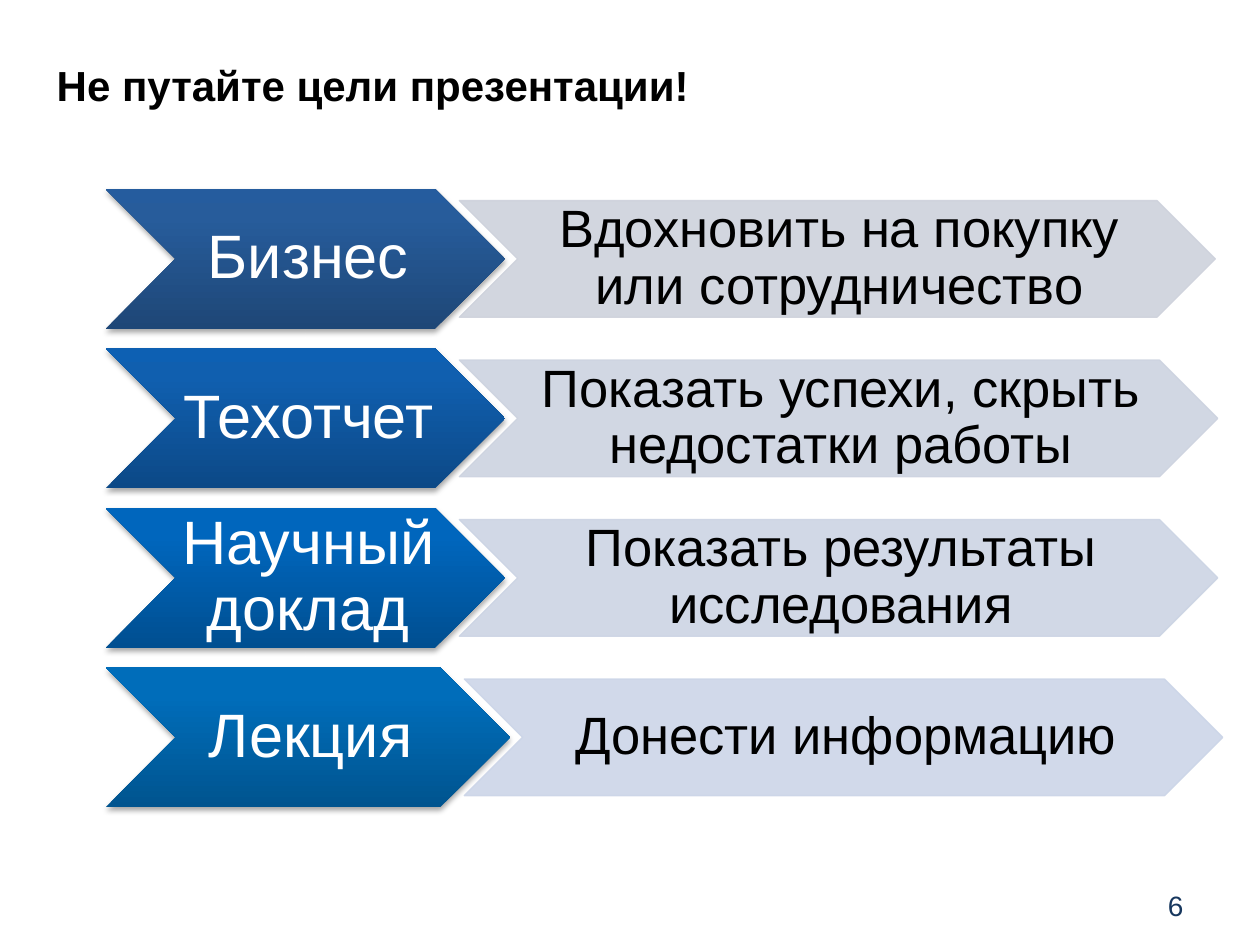
from copy import deepcopy

from lxml import etree
from pptx import Presentation
from pptx import util as u
from pptx.dml.color import RGBColor
from pptx.enum import shapes, text
from pptx.oxml import parse_xml
from pptx.oxml.ns import nsdecls, qn


def paint(color, hex_value):
    color.rgb = RGBColor.from_string(hex_value)


def add_chevron(left, top, width, height, label, size, color, inset):
    """Add a chevron with centred text and no shadow."""
    chevron = slide.shapes.add_shape(
        shapes.MSO_SHAPE.CHEVRON, u.Cm(left), u.Cm(top), u.Cm(width), u.Cm(height))
    chevron.shadow.inherit = False
    frame = chevron.text_frame
    frame.text = label
    frame.word_wrap = True
    frame.vertical_anchor = text.MSO_ANCHOR.MIDDLE
    frame.margin_left, frame.margin_right = u.Cm(inset), 0
    frame.margin_top = frame.margin_bottom = u.Cm(0.05)
    paragraph = frame.paragraphs[0]
    paragraph.alignment = text.PP_ALIGN.CENTER
    paragraph.line_spacing = 0.9
    paragraph.font.name = "Arial"
    paragraph.font.size = u.Pt(size)
    paint(paragraph.font.color, color)
    return chevron


prs = Presentation()
prs.slide_width, prs.slide_height = u.Cm(25.4), u.Cm(19.05)
slide = prs.slides.add_slide(prs.slide_layouts[5])

title = slide.shapes.title
title.left, title.top = u.Cm(0.89), u.Cm(0.33)
title.width, title.height = u.Cm(20.6), u.Cm(2.01)
title.text_frame.text = "Не путайте цели презентации!"
title.text_frame.vertical_anchor = text.MSO_ANCHOR.BOTTOM
heading = title.text_frame.paragraphs[0]
heading.alignment = text.PP_ALIGN.LEFT
heading.font.name = "Arial"
heading.font.size = u.Pt(24)
heading.font.bold = True
paint(heading.font.color, "000000")

# genre, its width, gradient from bottom to top, goal, its width, goal colour
rows = [
    ("Бизнес", 8.05, ("1E4777", "275C9B", "255C9E"),
     "Вдохновить на покупку или сотрудничество", 15.24, "CED2DC"),
    ("Техотчет", 8.05, ("0C4987", "105FAF", "0D60B3"),
     "Показать успехи, скрыть недостатки работы", 15.29, "CDD3E0"),
    ("Научный доклад", 8.05, ("004F91", "0066BD", "0067BD"),
     "Показать результаты исследования", 15.29, "CCD4E4"),
    ("Лекция", 8.15, ("00548F", "006DBA", "006DBB"),
     "Донести информацию", 15.29, "CCD5E8"),
]
LEFT, TOP, PITCH = 2.13, 3.81, 3.215
GENRE_HEIGHT, GOAL_HEIGHT, OVERLAP = 2.82, 2.35, 0.92

for i, (genre, genre_width, gradient, goal, goal_width, goal_color) in enumerate(rows):
    top = TOP + i * PITCH
    genre_chevron = add_chevron(
        LEFT, top, genre_width, GENRE_HEIGHT, genre, 35, "FFFFFF", 0.12)
    genre_chevron.line.fill.background()
    fill = genre_chevron.fill
    fill.gradient()
    fill.gradient_angle = 90
    properties = genre_chevron.element.spPr
    stop_list = properties.find(".//" + qn("a:gsLst"))
    stop_list.append(deepcopy(stop_list[-1]))
    for stop, position, color in zip(fill.gradient_stops, (0, 0.8, 1), gradient):
        stop.position = position
        paint(stop.color, color)
    properties.find(qn("a:effectLst")).append(parse_xml(
        f'<a:outerShdw {nsdecls("a")} blurRad="40000" dist="23000" dir="5400000" '
        'rotWithShape="0"><a:srgbClr val="000000"><a:alpha val="35000"/>'
        '</a:srgbClr></a:outerShdw>'))

    goal_chevron = add_chevron(
        LEFT + genre_width - OVERLAP, top + (GENRE_HEIGHT - GOAL_HEIGHT) / 2,
        goal_width, GOAL_HEIGHT, goal, 30, "000000", 0.1)
    goal_chevron.fill.solid()
    paint(goal_chevron.fill.fore_color, goal_color)
    paint(goal_chevron.line.color, goal_color)
    goal_chevron.line.width = u.Pt(0.75)
    for color in goal_chevron.element.spPr.iter(qn("a:srgbClr")):
        etree.SubElement(color, qn("a:alpha"), val="90000")

page_number = slide.shapes.add_textbox(u.Cm(23.09), u.Cm(17.78), u.Cm(1.22), u.Cm(0.94))
page_number.text_frame.text = "6"
page_number.text_frame.word_wrap = False
page_number.text_frame.vertical_anchor = text.MSO_ANCHOR.MIDDLE
number = page_number.text_frame.paragraphs[0]
number.alignment = text.PP_ALIGN.CENTER
number.font.name = "Arial"
number.font.size = u.Pt(16)
paint(number.font.color, "17375E")

prs.save("out.pptx")
